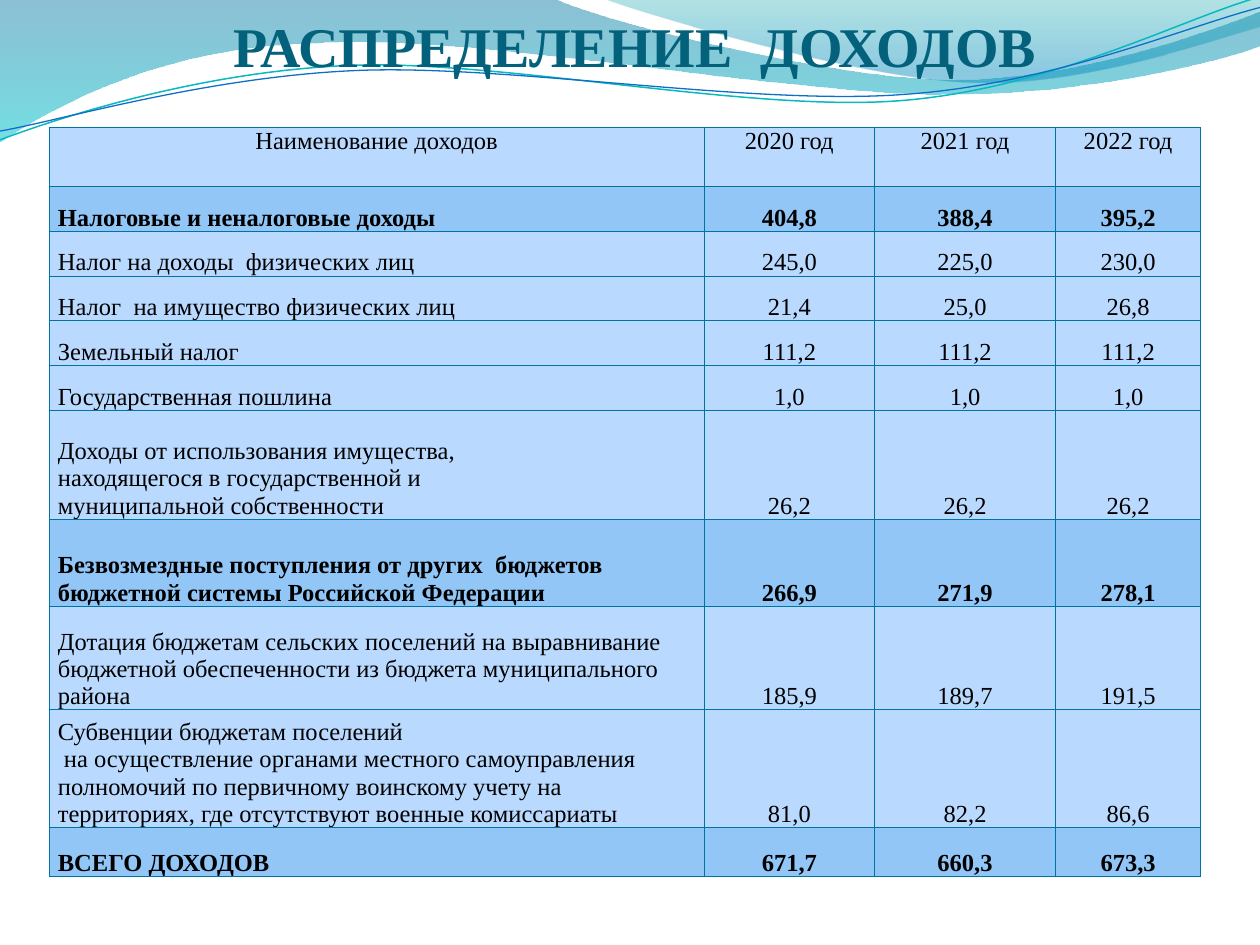
import math

import lxml.etree
import pptx
import pptx.dml.color
import pptx.enum.text
import pptx.oxml.ns
import pptx.util

Pt = pptx.util.Pt
qn = pptx.oxml.ns.qn
ALIGN = pptx.enum.text.PP_ALIGN
ANCHOR = pptx.enum.text.MSO_ANCHOR


def color(hex_text):
    return pptx.dml.color.RGBColor.from_string(hex_text)


def turn(point, center, degrees):
    """Turn a point clockwise about a center."""
    angle = math.radians(degrees)
    dx, dy = point[0] - center[0], point[1] - center[1]
    return (center[0] + dx * math.cos(angle) - dy * math.sin(angle),
            center[1] + dx * math.sin(angle) + dy * math.cos(angle))


class SlideWriter:
    font = "Times New Roman"
    title_color = "04617B"
    text_color = "000000"
    border_color = "0074A1"
    row_fill = "B9D9FE"
    total_fill = "91C6F7"
    thread_tilt = -2.7

    def __init__(self, slide):
        self.slide = slide

    def run(self, paragraph, text, size, hex_text, bold=False):
        run = paragraph.add_run()
        run.text = text
        run.font.name = self.font
        run.font.size = Pt(size)
        run.font.bold = bold
        run.font.color.rgb = color(hex_text)

    def outline(self, start, segments, close, center=(0, 0), tilt=0):
        """Segments are line ends (x, y) or cubic curves (three x, y pairs)."""
        points = [start] + [pair for s in segments for pair in zip(s[::2], s[1::2])]
        points = [turn(point, center, -tilt) for point in points]
        points = [(Pt(x), Pt(y)) for x, y in points]
        builder = self.slide.shapes.build_freeform(*points[0])
        builder.add_line_segments(points[1:], close=close)
        shape = builder.convert_to_shape()
        shape.shadow.inherit = False
        shape.rotation = tilt
        # Join the three lines of each curve into one cubic Bézier
        lines = iter(list(shape._element.spPr.iter(qn("a:lnTo"))))
        for segment in segments:
            parts = [next(lines) for _ in range(len(segment) // 2)]
            if len(parts) == 3:
                curve = lxml.etree.Element(qn("a:cubicBezTo"))
                parts[0].addprevious(curve)
                for part in parts:
                    curve.append(part[0])
                    part.getparent().remove(part)
        return shape

    def wave(self, start, segments, stops):
        """Filled wave; each stop is (position, colour, opacity in percent)."""
        shape = self.outline(start, segments, True)
        shape.line.fill.background()
        shape.fill.gradient()
        shape.fill.gradient_angle = 270
        for stop, (position, hex_text, opacity) in zip(shape.fill.gradient_stops, stops):
            stop.position = position
            stop.color.rgb = color(hex_text)
        fill_colors = list(shape._element.spPr.iter(qn("a:srgbClr")))
        for fill_color, stop in zip(fill_colors, stops):
            lxml.etree.SubElement(fill_color, qn("a:alpha"), val=str(stop[2] * 1000))

    def thread(self, start, segments, center, hex_text, width):
        shape = self.outline(start, segments, False, center, self.thread_tilt)
        shape.fill.background()
        shape.line.color.rgb = color(hex_text)
        shape.line.width = Pt(width)

    def title(self, text, left, top, width, height):
        frame = self.slide.shapes.add_textbox(Pt(left), Pt(top), Pt(width), Pt(height)).text_frame
        frame.word_wrap = True
        frame.vertical_anchor = ANCHOR.MIDDLE
        frame.margin_left = frame.margin_right = frame.margin_top = 0
        frame.margin_bottom = Pt(3.6)
        frame.paragraphs[0].alignment = ALIGN.CENTER
        self.run(frame.paragraphs[0], text, 32, self.title_color, True)

    def borders(self, cell):
        properties = cell._tc.get_or_add_tcPr()
        for index, side in enumerate(("lnL", "lnR", "lnT", "lnB")):
            line = lxml.etree.Element(qn("a:" + side), w=str(Pt(0.75)))
            fill = lxml.etree.SubElement(line, qn("a:solidFill"))
            lxml.etree.SubElement(fill, qn("a:srgbClr"), val=self.border_color)
            properties.insert(index, line)

    def cell(self, cell, text, centered, anchor, bold):
        cell.margin_left = cell.margin_right = Pt(5)
        cell.margin_top = cell.margin_bottom = 0
        cell.vertical_anchor = anchor
        cell.fill.solid()
        cell.fill.fore_color.rgb = color(self.total_fill if bold else self.row_fill)
        self.borders(cell)
        frame = cell.text_frame
        for index, line in enumerate(text.split("\n")):
            paragraph = frame.add_paragraph() if index else frame.paragraphs[0]
            paragraph.alignment = ALIGN.CENTER if centered else ALIGN.LEFT
            self.run(paragraph, line, 14, self.text_color, bold)

    def table(self, left, top, widths, heights, rows, bold_rows):
        table = self.slide.shapes.add_table(
            len(rows), len(widths), Pt(left), Pt(top), Pt(sum(widths)), Pt(sum(heights))).table
        table.first_row = table.horz_banding = False
        for column, width in zip(table.columns, widths):
            column.width = Pt(width)
        for r, (row, height) in enumerate(zip(rows, heights)):
            table.rows[r].height = Pt(height)
            anchor = ANCHOR.BOTTOM if r else ANCHOR.TOP
            for c, text in enumerate(row):
                self.cell(table.cell(r, c), text, r == 0 or c > 0, anchor, r in bold_rows)


INCOME = [
    ("Наименование доходов", "2020 год", "2021 год", "2022 год"),
    ("Налоговые и неналоговые доходы", "404,8", "388,4", "395,2"),
    ("Налог на доходы  физических лиц", "245,0", "225,0", "230,0"),
    ("Налог  на имущество физических лиц", "21,4", "25,0", "26,8"),
    ("Земельный налог", "111,2", "111,2", "111,2"),
    ("Государственная пошлина", "1,0", "1,0", "1,0"),
    ("Доходы от использования имущества,\nнаходящегося в государственной и\n"
     "муниципальной собственности", "26,2", "26,2", "26,2"),
    ("Безвозмездные поступления от других  бюджетов бюджетной системы "
     "Российской Федерации", "266,9", "271,9", "278,1"),
    ("Дотация бюджетам сельских поселений на выравнивание бюджетной "
     "обеспеченности из бюджета муниципального района", "185,9", "189,7", "191,5"),
    ("Субвенции бюджетам поселений\n на осуществление органами местного самоуправления "
     "полномочий по первичному воинскому учету на территориях, где отсутствуют "
     "военные комиссариаты", "81,0", "82,2", "86,6"),
    ("ВСЕГО ДОХОДОВ", "671,7", "660,3", "673,3"),
]


def main():
    deck = pptx.Presentation()
    deck.slide_width, deck.slide_height = Pt(720), Pt(540)
    writer = SlideWriter(deck.slides.add_slide(deck.slide_layouts[6]))

    # Waves across the top
    writer.wave((0, -0.4), [
        (316.8, -0.7), (342.7, 12.2, 478.1, 45.4, 545.8, 45.4),
        (614.2, 45.4, 689.8, 18.7, 720, 6.5), (720.7, 25.9),
        (707.8, 31.7, 626.4, 54.7, 537.1, 54), (447.8, 54, 275, 20.2, 185, 24.5),
        (92.9, 25.9, 33.1, 59.8, -0.7, 81.4), (0, -0.4)],
        [(0, "0074A1", 45), (1, "00C6CF", 55)])
    writer.wave((344.9, -0.7), [
        (366.5, 7.9, 491, 44.6, 553.7, 46.8), (616.3, 49.7, 691.9, 23, 720, 15.1),
        (720, -0.4), (344.9, -0.7)], [(0, "00A1A9", 30), (0.8, "008BBF", 45)])

    # Thin threads over the waves
    writer.thread((0, 79.9), [
        (34.6, 67, 113.8, 41, 199.4, 37.4), (284.4, 33.8, 427, 64.1, 513.4, 57.6),
        (599.8, 51.1, 675.4, 10.8, 718.6, -1.4)], (359.3, 41.4), "0AB8BF", 0.85)
    writer.thread((0, 74.9), [
        (33.8, 69.1, 118.1, 43.9, 203.8, 40.3), (290.2, 36.7, 429.8, 60.5, 516.2, 54),
        (601.9, 48.2, 677.5, 15.1, 720, 4.3)], (359.6, 42.5), "0F6FC6", 0.75)

    # Title and income table
    writer.title("РАСПРЕДЕЛЕНИЕ  ДОХОДОВ", 36, 13.3, 654, 28)
    writer.table(28.1, 73, [374.4, 97.2, 103.6, 82.8],
                 [33.6] + [25.6] * 5 + [62.2, 49.7, 59.1, 66.4, 28],
                 INCOME, bold_rows=(1, 7, 10))

    deck.save("out.pptx")


if __name__ == "__main__":
    main()
